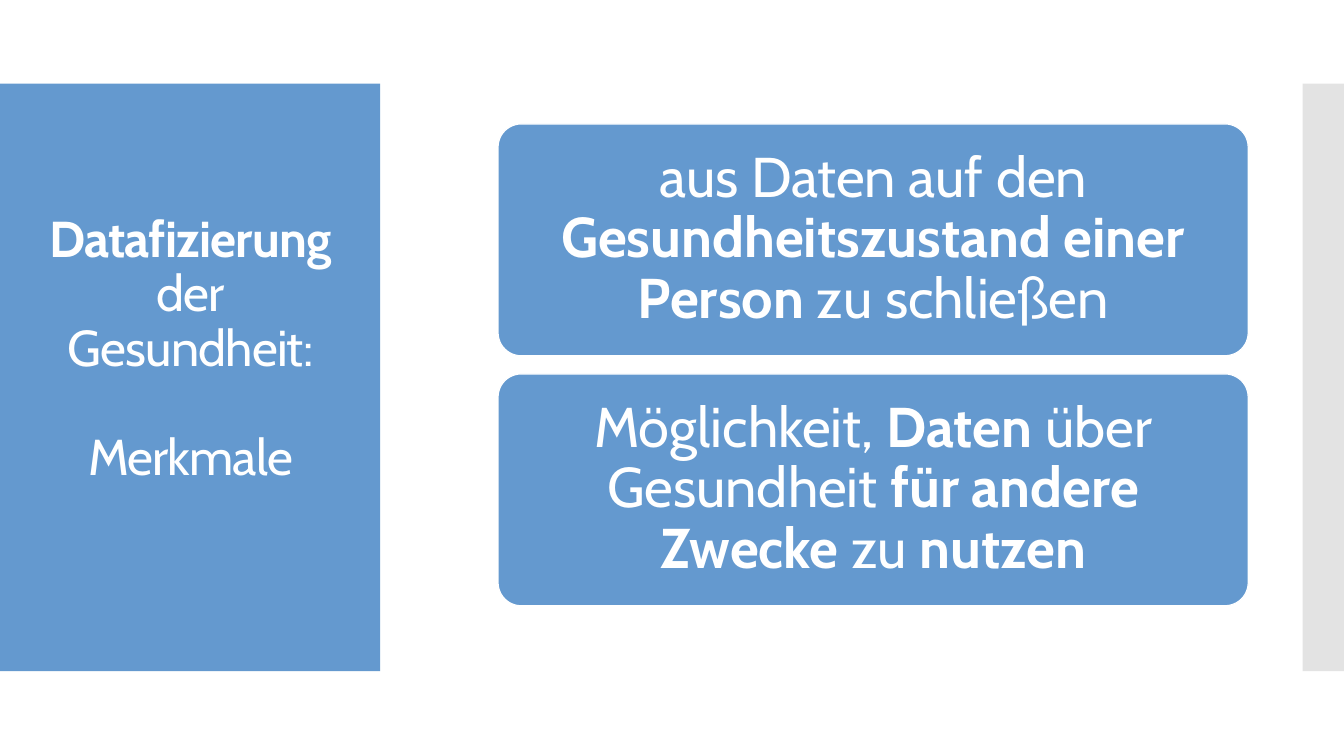
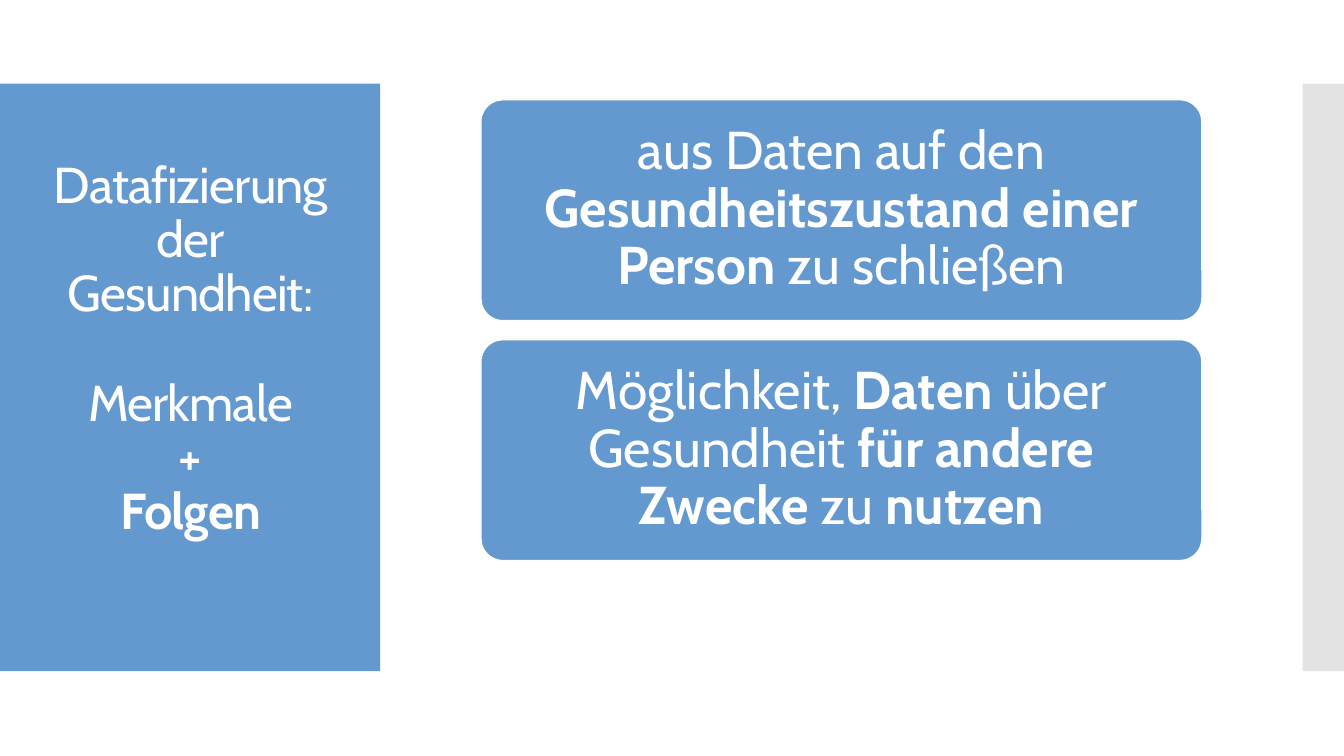
from dataclasses import dataclass

from lxml.etree import SubElement
from pptx import Presentation
from pptx.dml.color import RGBColor
from pptx.enum.shapes import MSO_SHAPE
from pptx.enum.text import MSO_ANCHOR, PP_ALIGN
from pptx.oxml.ns import qn
from pptx.util import Inches, Pt


@dataclass(frozen=True)
class Theme:
    font: str = "Cabin"
    blue: str = "6499CF"
    grey: str = "C8C8C8"
    white: str = "FFFFFF"
    title: float = 36
    large: float = 40
    small: float = 38
    edge: float = 0.85


THEME = Theme()

CARDS = [
    "aus Daten auf den *Gesundheitszustand einer Person* zu schließen",
    "Möglichkeit, *Daten* über Gesundheit *für andere Zwecke* zu *nutzen*",
]


def write(frame, lines, size, inset=(0.1, 0.05, 0.1, 0.05), track=0, gap=0):
    frame.word_wrap = True
    frame.vertical_anchor = MSO_ANCHOR.MIDDLE
    sides = [Inches(side) for side in inset]
    frame.margin_left, frame.margin_top = sides[:2]
    frame.margin_right, frame.margin_bottom = sides[2:]
    for row, line in enumerate(lines):
        para = frame.add_paragraph() if row else frame.paragraphs[0]
        para.alignment = PP_ALIGN.CENTER
        para.line_spacing = 0.9
        para.space_before = Pt(gap if row == 1 else 0)
        for part, words in enumerate(line.split("*")):
            if not words:
                continue
            run = para.add_run()
            run.text = words
            font = run.font
            font.name = THEME.font
            font.size = Pt(size)
            font.bold = part % 2 == 1
            font.color.rgb = RGBColor.from_string(THEME.white)
            if track:
                font._element.set("spc", str(round(track * 100)))


def block(slide, left, top, width, height, fill, kind=MSO_SHAPE.RECTANGLE):
    shape = slide.shapes.add_shape(
        kind, Inches(left), Inches(top), Inches(width), Inches(height))
    shape.shadow.inherit = False
    shape.fill.solid()
    shape.fill.fore_color.rgb = RGBColor.from_string(fill)
    shape.line.fill.background()
    return shape


def fade(shape, share):
    tint = shape._element.spPr.find(qn("a:solidFill"))[0]
    SubElement(tint, qn("a:alpha")).set("val", str(share * 1000))


def frame(deck, title):
    slide = deck.slides.add_slide(deck.slide_layouts[6])
    block(slide, 0, 0.83, 3.77, 5.83, THEME.blue)
    fade(block(slide, 12.92, 0.83, 0.42, 5.83, THEME.grey), 50)
    box = slide.shapes.add_textbox(
        Inches(0.28), Inches(1.23), Inches(3.22), Inches(5.03))
    write(box.text_frame, title, THEME.title,
          inset=(0.1, 0.05, 0.1, 0.59), track=-0.6, gap=39)
    return slide


def stack(slide, left, top, width, height, step, size, inset):
    for row, words in enumerate(CARDS):
        card = block(slide, left, top + row * step, width, height,
                     THEME.blue, MSO_SHAPE.ROUNDED_RECTANGLE)
        card.adjustments[0] = 0.1
        card.line.color.rgb = RGBColor.from_string(THEME.white)
        card.line.width = Pt(THEME.edge)
        write(card.text_frame, [words], size, inset=(inset,) * 4)


def main():
    deck = Presentation()
    deck.slide_width = Inches(13.33)
    deck.slide_height = Inches(7.5)

    traits = frame(deck, ["*Datafizierung* der Gesundheit:", "Merkmale"])
    stack(traits, 4.94, 1.23, 7.44, 2.3, 2.48, THEME.large, 0.17)

    effects = frame(
        deck, ["Datafizierung der Gesundheit:", "Merkmale", "+", "*Folgen*"])
    stack(effects, 4.77, 0.99, 7.15, 2.19, 2.38, THEME.small, 0.16)

    deck.save("out.pptx")


if __name__ == "__main__":
    main()
